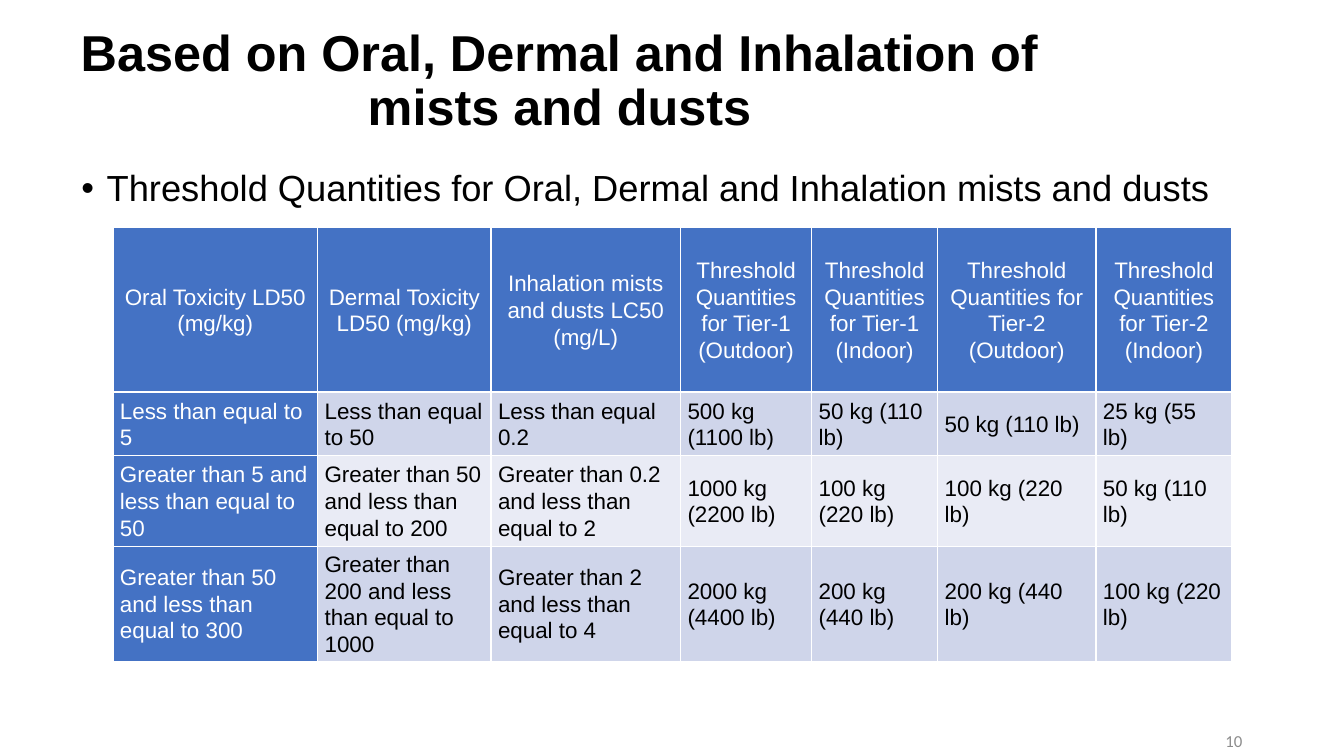
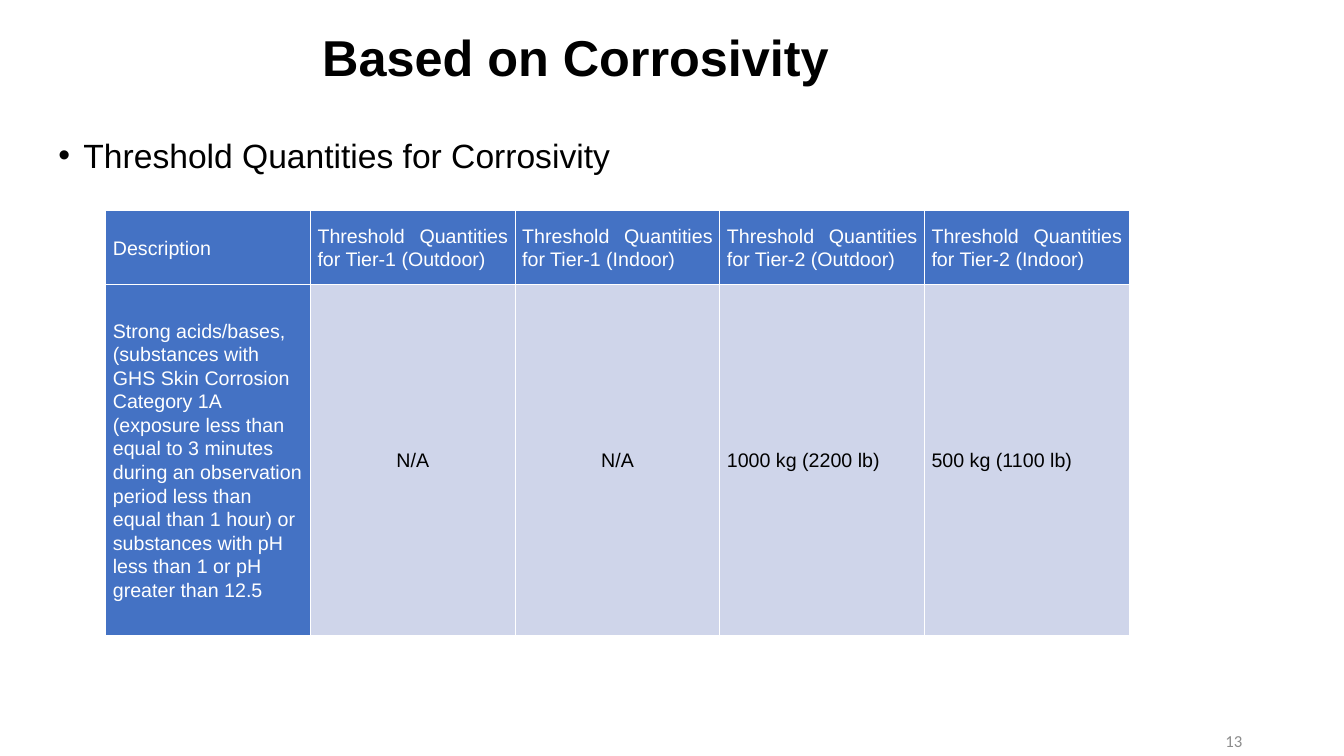
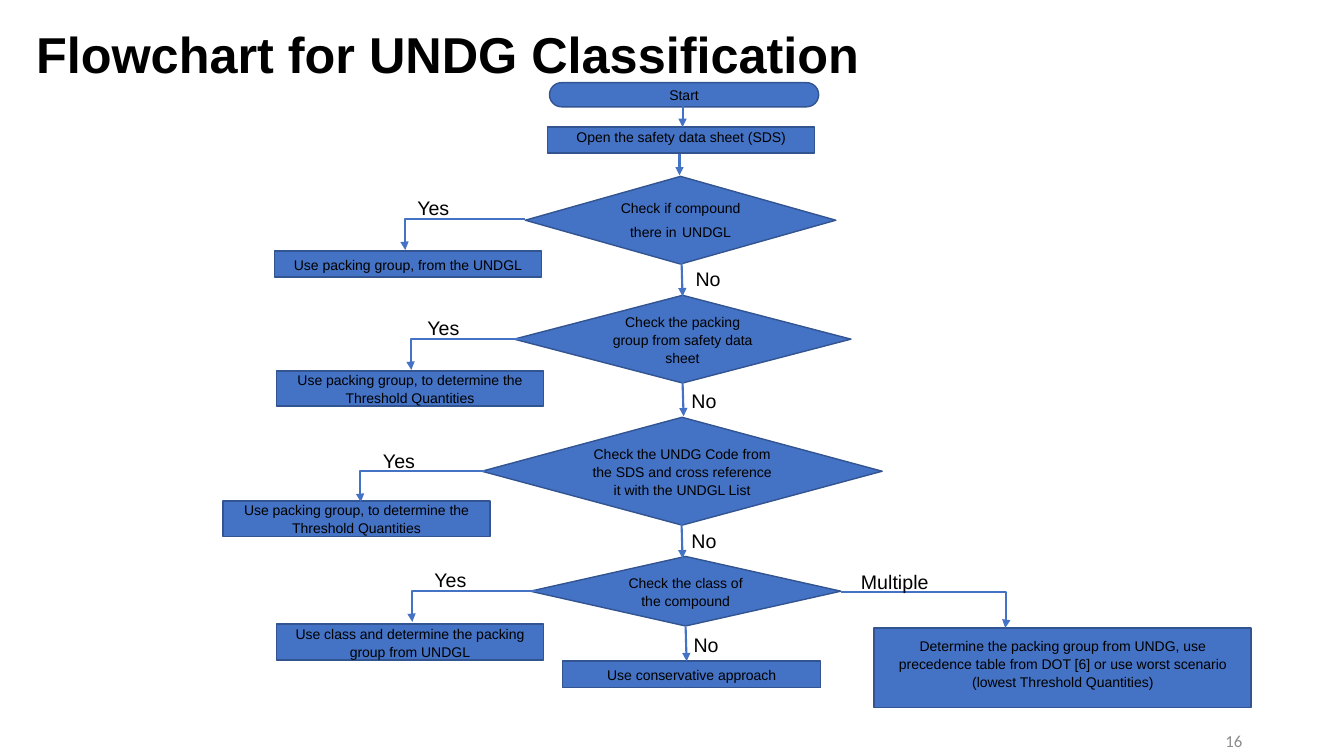
from lxml import etree
from pptx import Presentation
from pptx.dml.color import RGBColor
from pptx.enum import shapes, text as txt
from pptx.oxml import ns
from pptx.util import Inches, Pt

BLUE, EDGE, WHITE, BLACK, GREY = "4472C4", "325491", "FFFFFF", "000000", "8C8C8C"
BANDS = ["CFD5EA", "E9EBF5"]
LEFT, CENTER, RIGHT, JUSTIFY = (txt.PP_ALIGN.LEFT, txt.PP_ALIGN.CENTER,
                                txt.PP_ALIGN.RIGHT, txt.PP_ALIGN.JUSTIFY)
MIDDLE, TOP = txt.MSO_ANCHOR.MIDDLE, txt.MSO_ANCHOR.TOP
KIND = shapes.MSO_SHAPE
rgb = RGBColor.from_string


def add_xml(parent, tag, **attributes):
    return etree.SubElement(parent, ns.qn(tag), **attributes)


def write(frame, words, size=10, color=BLACK, font="Arial", bold=False,
          align=LEFT, spacing=1.07, anchor=TOP, bullet=False):
    """Fill a text frame; words is a string or a list of (string, size)."""
    frame.word_wrap = True
    frame.vertical_anchor = anchor
    para = frame.paragraphs[0]
    if bullet:
        properties = para._p.get_or_add_pPr()
        properties.set("marL", str(Inches(0.25)))
        properties.set("indent", str(-Inches(0.25)))
        add_xml(properties, "a:buFont", typeface="Arial")
        add_xml(properties, "a:buChar", char="•")
    para.alignment = align
    para.line_spacing = spacing
    for part, points in [(words, size)] if isinstance(words, str) else words:
        span = para.add_run()
        span.text = part
        span.font.size = Pt(points)
        span.font.name = font
        span.font.bold = bold
        span.font.color.rgb = rgb(color)


deck = Presentation()
deck.slide_width, deck.slide_height = Inches(13.33), Inches(7.5)

# Titles and page numbers
titles = [
    ("Based on Oral, Dermal and Inhalation of mists and dusts", "10", CENTER, (0.14, 0.15, 10.82, 1.33)),
    ("Based on Corrosivity", "13", CENTER, (0.54, 0.29, 10.34, 0.62)),
    ("Flowchart for UNDG Classification", "16", LEFT, (0.26, 0.08, 12.24, 0.98)),
]
pages = []
for title, number, align, place in titles:
    page = deck.slides.add_slide(deck.slide_layouts[6])
    pages.append(page)
    box = page.shapes.add_textbox(*map(Inches, place))
    write(box.text_frame, title, size=36, bold=True, align=align, spacing=0.9, anchor=MIDDLE)
    box = page.shapes.add_textbox(*map(Inches, (9.42, 7.15, 3, 0.4)))
    write(box.text_frame, number, size=12, color=GREY, font="Calibri", align=RIGHT,
          spacing=1.0, anchor=MIDDLE)

# Threshold tables with their bullet lines
tiers = [f"Threshold Quantities for Tier-{tier} ({place})"
         for tier in (1, 2) for place in ("Outdoor", "Indoor")]
toxicity = [
    ["Oral Toxicity LD50 (mg/kg)", "Dermal Toxicity LD50 (mg/kg)",
     "Inhalation mists and dusts LC50 (mg/L)", *tiers],
    ["Less than equal to 5", "Less than equal to 50", "Less than equal 0.2",
     "500 kg (1100 lb)", "50 kg (110 lb)", "50 kg (110 lb)", "25 kg (55 lb)"],
    ["Greater than 5 and less than equal to 50", "Greater than 50 and less than equal to 200",
     "Greater than 0.2 and less than equal to 2",
     "1000 kg (2200 lb)", "100 kg (220 lb)", "100 kg (220 lb)", "50 kg (110 lb)"],
    ["Greater than 50 and less than equal to 300", "Greater than 200 and less than equal to 1000",
     "Greater than 2 and less than equal to 4",
     "2000 kg (4400 lb)", "200 kg (440 lb)", "200 kg (440 lb)", "100 kg (220 lb)"],
]
corrosivity = [
    ["Description", *tiers],
    ["Strong acids/bases, (substances with GHS Skin Corrosion Category 1A (exposure less than "
     "equal to 3 minutes during an observation period less than equal than 1 hour) or substances "
     "with pH less than 1 or pH greater than 12.5",
     "N/A", "N/A", "1000 kg (2200 lb)", "500 kg (1100 lb)"],
]
tables = [
    ("Threshold Quantities for Oral, Dermal and Inhalation mists and dusts", 25.9,
     (0.71, 1.64, 11.5, 0.62), toxicity, 16, CENTER, (1.12, 2.26),
     [2.03, 1.72, 1.88, 1.3, 1.25, 1.57, 1.35], [1.63, 0.63, 0.9, 1.09]),
    ("Threshold Quantities for Corrosivity", 24,
     (0.48, 1.33, 9.66, 0.62), corrosivity, 14, JUSTIFY, (1.05, 2.09),
     [2.03] * 5, [0.73, 3.49]),
]
for page, (point, point_size, place, rows, size, head_align, corner, widths, heights) in zip(pages, tables):
    box = page.shapes.add_textbox(*map(Inches, place))
    write(box.text_frame, point, size=point_size, spacing=0.9, bullet=True)
    table = page.shapes.add_table(len(rows), len(widths), *map(
        Inches, (*corner, sum(widths), sum(heights)))).table
    table.first_row = table.horz_banding = False
    for column, width in zip(table.columns, widths):
        column.width = Inches(width)
    for r, (row, height) in enumerate(zip(rows, heights)):
        table.rows[r].height = Inches(height)
        for c, words in enumerate(row):
            cell = table.cell(r, c)
            heading = r == 0 or c == 0
            align = head_align if r == 0 else CENTER if words == "N/A" else LEFT
            write(cell.text_frame, words, size=size, color=WHITE if heading else BLACK, align=align)
            cell.vertical_anchor = MIDDLE
            cell.margin_left = cell.margin_right = Inches(0.07)
            cell.margin_top = cell.margin_bottom = 0
            properties = cell._tc.get_or_add_tcPr()
            for side in ("a:lnL", "a:lnR", "a:lnT", "a:lnB"):
                border = add_xml(properties, side, w=str(Pt(1)))
                add_xml(add_xml(border, "a:solidFill"), "a:srgbClr", val=WHITE)
            cell.fill.solid()
            cell.fill.fore_color.rgb = rgb(BLUE if heading else BANDS[(r - 1) % 2])

# Flowchart steps; a raised step has its text above the middle
flow = pages[2].shapes
use_group = "Use packing group, to determine the Threshold Quantities"
steps = [
    (KIND.ROUNDED_RECTANGLE, (5.45, 0.82, 2.67, 0.24), "Start", False),
    (KIND.RECTANGLE, (5.43, 1.26, 2.65, 0.26), "Open the safety data sheet (SDS)", True),
    (KIND.FLOWCHART_DECISION, (5.21, 1.75, 3.08, 0.87),
     [("Check if compound there in", 10), (" ", 14), ("UNDGL", 10)], False),
    (KIND.RECTANGLE, (2.72, 2.49, 2.65, 0.26), "Use packing group, from the UNDGL", False),
    (KIND.FLOWCHART_DECISION, (5.1, 2.93, 3.34, 0.87),
     "Check the packing group from safety data sheet", False),
    (KIND.RECTANGLE, (2.74, 3.68, 2.65, 0.35), use_group, False),
    (KIND.FLOWCHART_DECISION, (4.78, 4.14, 3.97, 1.07),
     "Check the UNDG Code from the SDS and cross reference it with the UNDGL List", False),
    (KIND.RECTANGLE, (2.21, 4.97, 2.65, 0.35), use_group, False),
    (KIND.FLOWCHART_DECISION, (5.26, 5.52, 3.08, 0.69), "Check the class of the compound", False),
    (KIND.RECTANGLE, (2.74, 6.19, 2.65, 0.36),
     "Use class and determine the packing group from UNDGL", False),
    (KIND.RECTANGLE, (8.67, 6.23, 3.74, 0.79),
     "Determine the packing group from UNDG, use precedence table from DOT [6] or use worst "
     "scenario (lowest Threshold Quantities)", True),
    (KIND.RECTANGLE, (5.58, 6.56, 2.56, 0.26), "Use conservative approach", False),
]
for kind, place, words, raised in steps:
    step = flow.add_shape(kind, *map(Inches, place))
    step.shadow.inherit = False
    step.fill.solid()
    step.fill.fore_color.rgb = rgb(BLUE)
    step.line.color.rgb = rgb(EDGE)
    step.line.width = Pt(1)
    if kind == KIND.ROUNDED_RECTANGLE:
        step.adjustments[0] = 0.5
    if raised:
        step.text_frame.margin_top, step.text_frame.margin_bottom = 0, Inches(0.08)
    write(step.text_frame, words, align=CENTER, anchor=MIDDLE)

# Arrows: straight ones go down, bent ones go sideways and then down
arrows = [
    (6.77, 1.05, 6.77, 1.26), (6.74, 1.53, 6.74, 1.74), (6.76, 2.6, 6.77, 2.94),
    (6.77, 3.79, 6.78, 4.13), (6.76, 5.2, 6.77, 5.54), (6.8, 6.22, 6.81, 6.56),
    (5.21, 2.17, 4.02, 2.48), (5.27, 3.36, 4.08, 3.67), (4.81, 4.67, 3.58, 4.98),
    (5.32, 5.86, 4.09, 6.17), (8.34, 5.87, 9.97, 6.23),
]
for ends in arrows:
    bent = abs(ends[2] - ends[0]) > 1
    kind = shapes.MSO_CONNECTOR.ELBOW if bent else shapes.MSO_CONNECTOR.STRAIGHT
    arrow = flow.add_connector(kind, *map(Inches, ends))
    arrow.line.color.rgb = rgb(BLUE)
    arrow.line.width = Pt(1.5)
    add_xml(arrow.line._get_or_add_ln(), "a:tailEnd", type="triangle")
    properties = arrow._element.spPr
    add_xml(properties, "a:effectLst")
    if bent:
        geometry = properties.find(ns.qn("a:prstGeom"))
        guides = geometry.find(ns.qn("a:avLst"))
        if guides is None:
            guides = add_xml(geometry, "a:avLst")
        add_xml(guides, "a:gd", name="adj1", fmla="val 100600")

# Answers beside the arrows
answers = [
    ("Yes", 4.04, 1.88), ("Yes", 4.14, 3.07), ("Yes", 3.7, 4.39), ("Yes", 4.21, 5.57),
    ("No", 6.8, 2.58), ("No", 6.76, 3.79), ("No", 6.76, 5.18), ("No", 6.78, 6.21),
    ("Multiple", 8.44, 5.59),
]
for answer, left, top in answers:
    box = flow.add_textbox(*map(Inches, (left, top, 1.52, 0.2)))
    write(box.text_frame, answer, size=14)

deck.save("out.pptx")
